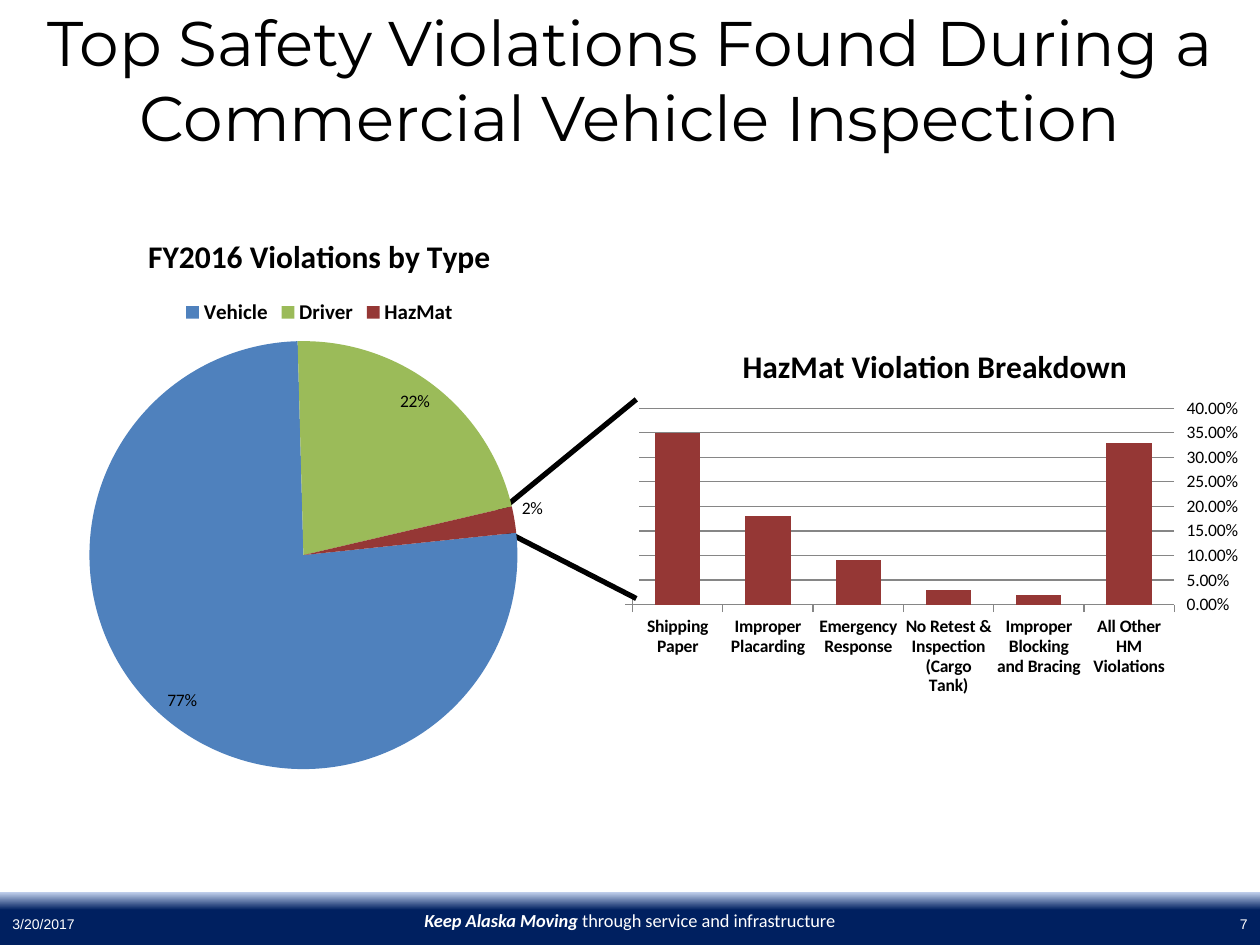
import pptx
import pptx.chart.data
import pptx.dml.color
import pptx.enum.chart
import pptx.enum.shapes
import pptx.enum.text
import pptx.oxml
import pptx.oxml.ns
import pptx.util

Inches = pptx.util.Inches
Pt = pptx.util.Pt
RGBColor = pptx.dml.color.RGBColor
ALIGN = pptx.enum.text.PP_ALIGN
ANCHOR = pptx.enum.text.MSO_ANCHOR
SHAPE = pptx.enum.shapes.MSO_SHAPE
CHART = pptx.enum.chart

BLACK = RGBColor(0x00, 0x00, 0x00)
WHITE = RGBColor(0xFF, 0xFF, 0xFF)
NAVY = RGBColor(0x00, 0x20, 0x60)
PALE_BLUE = RGBColor(0xC2, 0xD1, 0xED)
BLUE = RGBColor(0x4F, 0x81, 0xBD)
GREEN = RGBColor(0x9B, 0xBB, 0x59)
DARK_RED = RGBColor(0x95, 0x37, 0x35)
GRAY = RGBColor(0x86, 0x86, 0x86)

VIOLATION_TYPES = [("Vehicle", 77, BLUE), ("Driver", 22, GREEN), ("HazMat", 2, DARK_RED)]
HAZMAT_VIOLATIONS = {
    "Shipping Paper": 0.35,
    "Improper Placarding": 0.18,
    "Emergency Response": 0.09,
    "No Retest & Inspection (Cargo Tank)": 0.03,
    "Improper Blocking and Bracing": 0.02,
    "All Other HM Violations": 0.33,
}


def add_text(slide, box, text, emphasis="", size=12, font="Calibri", color=BLACK,
             align=ALIGN.LEFT, anchor=ANCHOR.TOP):
    """Add a text box; emphasis is a bold italic lead-in before the text."""
    frame = slide.shapes.add_textbox(*map(Inches, box)).text_frame
    frame.word_wrap = True
    frame.vertical_anchor = anchor
    paragraph = frame.paragraphs[0]
    paragraph.alignment = align
    for words, strong in ((emphasis, True), (text, False)):
        if words:
            run = paragraph.add_run()
            run.text = words
            run.font.size = Pt(size)
            run.font.name = font
            run.font.color.rgb = color
            run.font.bold = run.font.italic = strong


def add_rectangle(slide, box, color):
    rectangle = slide.shapes.add_shape(SHAPE.RECTANGLE, *map(Inches, box))
    rectangle.shadow.inherit = False
    rectangle.line.fill.background()
    rectangle.fill.solid()
    rectangle.fill.fore_color.rgb = color
    return rectangle


def add_footer(slide, left, top, width, height):
    band = add_rectangle(slide, (left, top, width, height), NAVY)
    band.fill.gradient()
    band.fill.gradient_angle = 270
    for stop, position, color in zip(band.fill.gradient_stops, (0, 0.34), (PALE_BLUE, NAVY)):
        stop.position = position
        stop.color.rgb = color

    side = 2.33
    text_top, text_height = top + 0.09, height - 0.09
    add_text(slide, (left + side, text_top, width - 2 * side, text_height),
             "through service and infrastructure", emphasis="Keep Alaska Moving ",
             size=10.5, color=WHITE, align=ALIGN.CENTER)
    add_text(slide, (left, text_top, side, text_height), "3/20/2017",
             size=8, font="Arial", color=WHITE, anchor=ANCHOR.MIDDLE)
    add_text(slide, (left + width - side, text_top, side, text_height), "7",
             size=8, font="Arial", color=WHITE, align=ALIGN.RIGHT, anchor=ANCHOR.MIDDLE)


def add_chart(slide, box, kind, title, categories, values, number_format, plot_area):
    """Add a one-series chart; plot_area is x, y, w, h as shares of the box."""
    data = pptx.chart.data.CategoryChartData(number_format=number_format)
    data.categories = categories
    data.add_series("Series 1", values)
    chart = slide.shapes.add_chart(kind, *map(Inches, box), data).chart
    chart.font.size = Pt(10)
    chart.font.name = "Calibri"
    chart.font.color.rgb = BLACK
    chart.has_legend = False
    chart.has_title = True
    chart.chart_title.include_in_layout = False
    heading = chart.chart_title.text_frame
    heading.text = title
    font = heading.paragraphs[0].runs[0].font
    font.size, font.bold, font.name = Pt(18), True, "Calibri"
    font.color.rgb = BLACK

    area = chart._chartSpace.chart.plotArea
    for old_layout in area.findall(pptx.oxml.ns.qn("c:layout")):
        area.remove(old_layout)
    parts = "".join(f'<c:{name} val="{share}"/>' for name, share in zip("xywh", plot_area))
    area.insert(0, pptx.oxml.parse_xml(
        f'<c:layout {pptx.oxml.ns.nsdecls("c")}><c:manualLayout>'
        '<c:layoutTarget val="inner"/><c:xMode val="edge"/><c:yMode val="edge"/>'
        f'{parts}</c:manualLayout></c:layout>'))
    return chart


def add_breakdown(slide, left, top, width, height):
    chart = add_chart(slide, (left, top, width, height), CHART.XL_CHART_TYPE.COLUMN_CLUSTERED,
                      "HazMat Violation Breakdown", list(HAZMAT_VIOLATIONS),
                      list(HAZMAT_VIOLATIONS.values()), "0.00%", (0.02, 0.22, 0.86, 0.52))
    plot = chart.plots[0]
    plot.gap_width = 100
    plot.vary_by_categories = False
    bars = plot.series[0].format.fill
    bars.solid()
    bars.fore_color.rgb = DARK_RED

    scale = chart.value_axis
    scale.minimum_scale, scale.maximum_scale, scale.major_unit = 0, 0.4, 0.05
    scale.tick_label_position = CHART.XL_TICK_LABEL_POSITION.HIGH
    scale.tick_labels.number_format = "0.00%"
    scale.tick_labels.number_format_is_linked = False
    scale.has_major_gridlines = True
    chart.category_axis.tick_labels.font.bold = True
    chart.category_axis.tick_labels.font.size = Pt(10)
    for axis in (scale, chart.category_axis):
        axis.major_tick_mark = CHART.XL_TICK_MARK.OUTSIDE
        axis.format.line.color.rgb = GRAY
    scale.major_gridlines.format.line.color.rgb = GRAY

    # Covers the scale's own line, whose labels stand on the right
    add_rectangle(slide, (left, top + 0.59, 0.15, 1.58), WHITE)


def add_callout_line(slide, start, end):
    line = slide.shapes.add_connector(pptx.enum.shapes.MSO_CONNECTOR.STRAIGHT,
                                      *map(Inches, start + end))
    line.line.color.rgb = BLACK
    line.line.width = Pt(3)
    line._element.spPr.append(pptx.oxml.parse_xml(
        f'<a:effectLst {pptx.oxml.ns.nsdecls("a")}/>'))


def add_type_pie(slide, left, top, width, height):
    names, shares, colors = zip(*VIOLATION_TYPES)
    chart = add_chart(slide, (left, top, width, height), CHART.XL_CHART_TYPE.PIE,
                      "FY2016 Violations by Type", names, shares, '0"%"',
                      (0.14, 0.225, 0.67, 0.745))
    chart.has_legend = True
    chart.legend.position = CHART.XL_LEGEND_POSITION.TOP
    chart.legend.include_in_layout = False
    chart.legend.font.size = Pt(12)
    chart.legend.font.bold = True

    plot = chart.plots[0]
    plot.vary_by_categories = True
    pie = plot._element
    for old_angle in pie.findall(pptx.oxml.ns.qn("c:firstSliceAng")):
        pie.remove(old_angle)
    pie.append(pptx.oxml.parse_xml(
        f'<c:firstSliceAng {pptx.oxml.ns.nsdecls("c")} val="84"/>'))

    series = plot.series[0]
    labels = series.data_labels
    labels.show_value = True
    labels.position = CHART.XL_LABEL_POSITION.INSIDE_END
    for index, color in enumerate(colors):
        fill = series.points[index].format.fill
        fill.solid()
        fill.fore_color.rgb = color
    series.points[names.index("HazMat")].data_label.position = (
        CHART.XL_LABEL_POSITION.OUTSIDE_END)


def main():
    presentation = pptx.Presentation()
    presentation.slide_width, presentation.slide_height = Inches(10), Inches(7.5)
    slide = presentation.slides.add_slide(presentation.slide_layouts[6])
    add_footer(slide, 0, 7.08, 10, 0.42)
    add_text(slide, (0, 0, 10, 1.25),
             "Top Safety Violations Found During a Commercial Vehicle Inspection",
             size=36, font="Montserrat", align=ALIGN.CENTER, anchor=ANCHOR.MIDDLE)
    add_breakdown(slide, 4.92, 2.58, 5, 3)
    add_callout_line(slide, (5.05, 4.75), (3.92, 4.17))
    add_callout_line(slide, (3.83, 4.17), (5.05, 3.17))
    add_type_pie(slide, 0, 1.67, 5.07, 4.58)
    presentation.save("out.pptx")


if __name__ == "__main__":
    main()
